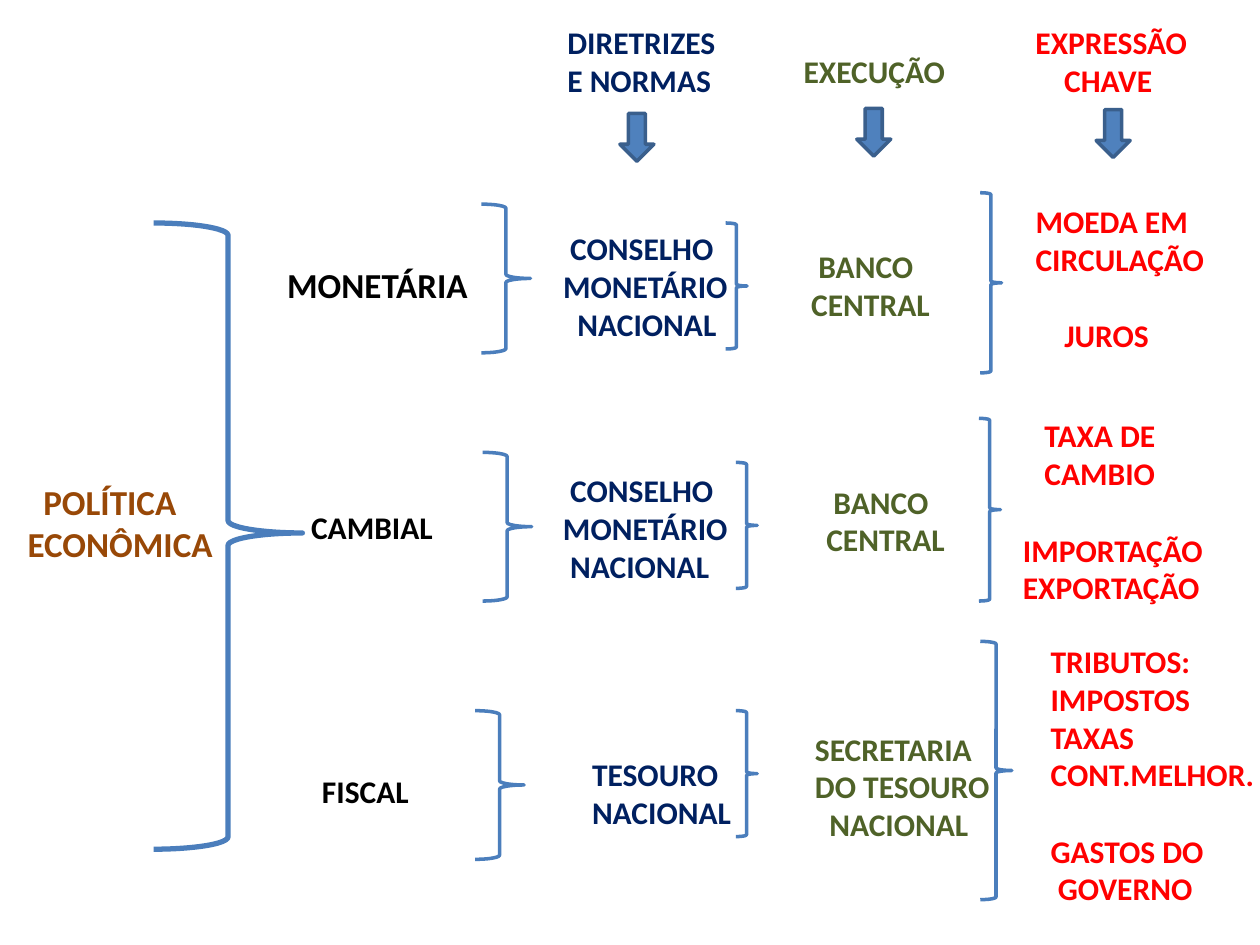
from pptx import Presentation, util as u
from pptx.dml.color import RGBColor
from pptx.enum import shapes, text

COLORS = {"root": "984807", "policy": "000000", "norms": "002060",
          "execution": "4F6228", "key": "FF0000",
          "brace": "4B7EBC", "arrow": "4F81BD", "arrow_edge": "3A5F8C"}
COLS, ROWS = 100, 75      # grid cells across and down the slide
STEP = 0.057              # indent step in inches
LINE_GAP = 22             # one empty line, in points


class Diagram:
    def __init__(self):
        self.deck = Presentation()
        self.deck.slide_width, self.deck.slide_height = u.Inches(10), u.Inches(7.5)
        self.slide = self.deck.slides.add_slide(self.deck.slide_layouts[6])

    def box(self, cells):
        """Turn left, top, width, height in grid cells into lengths."""
        across, down = self.deck.slide_width / COLS, self.deck.slide_height / ROWS
        return [round(n * unit) for n, unit in zip(cells, (across, down) * 2)]

    def label(self, cells, role, lines, size=18):
        """Write lines of (text, indent steps, empty lines before)."""
        frame = self.slide.shapes.add_textbox(*self.box(cells)).text_frame
        layout = {"word_wrap": True, "margin_right": 0,
                  "vertical_anchor": text.MSO_ANCHOR.BOTTOM}
        for name, value in layout.items():
            setattr(frame, name, value)
        for i, (words, indent, gap) in enumerate(lines):
            para = frame.paragraphs[0] if i == 0 else frame.add_paragraph()
            para.space_before = u.Pt(gap * LINE_GAP)
            para._p.get_or_add_pPr().set("marL", str(u.Inches(indent * STEP)))
            run = para.add_run()
            run.text = words
            style = {"name": "Calibri", "size": u.Pt(size), "bold": True}
            for name, value in style.items():
                setattr(run.font, name, value)
            run.font.color.rgb = RGBColor.from_string(COLORS[role])

    def preset(self, kind, cells, edge, weight):
        shape = self.slide.shapes.add_shape(kind, *self.box(cells))
        shape.shadow.inherit = False
        shape.line.color.rgb = RGBColor.from_string(COLORS[edge])
        shape.line.width = u.Pt(weight)
        return shape

    def brace(self, cells, weight=2, point=0.5):
        brace = self.preset(shapes.MSO_SHAPE.RIGHT_BRACE, cells, "brace", weight)
        brace.fill.background()
        brace.adjustments[1] = point

    def arrow(self, left, top):
        arrow = self.preset(shapes.MSO_SHAPE.DOWN_ARROW, (left, top, 2.7, 3.8),
                            "arrow_edge", 2)
        arrow.fill.solid()
        arrow.fill.fore_color.rgb = RGBColor.from_string(COLORS["arrow"])


# Column headings: role, box, lines, arrow corner
HEADINGS = [
    ("norms", (42.9, 1.2, 19.3, 7.1),
     [("DIRETRIZES", 2, 0), ("E NORMAS", 2, 0)], (49.2, 9)),
    ("execution", (62.8, 3.6, 20, 4), [("EXECUÇÃO", 0, 0)], (68, 8.6)),
    ("key", (81.2, 1.2, 16.7, 7.1),
     [("EXPRESSÃO", 0, 0), ("CHAVE", 4, 0)], (87, 8.7)),
]

# Each policy: labels as (role, box, lines, size), then its three braces
POLICIES = [
    ([("policy", (21.8, 10.2, 17.9, 14.5), [("MONETÁRIA", 0, 0)], 20),
      ("norms", (43.7, 14.6, 19.1, 13.1),
       [("CONSELHO", 1, 0), ("MONETÁRIO", 0, 0), ("NACIONAL", 2, 0)], 18),
      ("execution", (63.4, 19, 16, 7.1), [("BANCO", 1, 0), ("CENTRAL", 0, 0)], 18),
      ("key", (81.2, 15.5, 15.5, 13.1),
       [("MOEDA EM", 0, 0), ("CIRCULAÇÃO", 0, 0), ("JUROS", 4, 1)], 18)],
     [(38.2, 16.2, 3.9, 11.8), (57.6, 17.7, 1.7, 10), (77.8, 15.3, 1.7, 14.3)]),
    ([("policy", (23.7, 33.7, 14.5, 10.1), [("CAMBIAL", 0, 0)], 18),
      ("norms", (43.7, 27.7, 17.6, 19.2),
       [("CONSELHO", 1, 0), ("MONETÁRIO", 0, 0), ("NACIONAL", 1, 0)], 18),
      ("execution", (64.6, 37.7, 13.6, 7.1), [("BANCO", 1, 0), ("CENTRAL", 0, 0)], 18),
      ("key", (80.2, 32.4, 18.7, 16.2),
       [("TAXA DE", 3, 0), ("CAMBIO", 3, 0),
        ("IMPORTAÇÃO", 0, 1), ("EXPORTAÇÃO", 0, 0)], 18)],
     [(38.3, 35.9, 3.9, 11.8), (58.4, 36.7, 1.7, 10), (77.7, 33.2, 1.7, 14.5)]),
    ([("policy", (24, 51.7, 12.1, 13.1), [("FISCAL", 1, 0)], 18),
      ("norms", (46, 50.2, 13.1, 16.2), [("TESOURO", 0, 0), ("NACIONAL", 0, 0)], 18),
      ("execution", (63.7, 54.3, 19.7, 13.1),
       [("SECRETARIA", 0, 0), ("DO TESOURO", 0, 0), ("NACIONAL", 2, 0)], 18),
      ("key", (82.4, 50.3, 18.3, 22.2),
       [("TRIBUTOS:", 0, 0), ("IMPOSTOS", 0, 0), ("TAXAS", 0, 0),
        ("CONT.MELHOR.", 0, 0), ("GASTOS DO", 0, 1), ("GOVERNO", 1, 0)], 18)],
     [(37.7, 56.4, 3.9, 11.8), (58.4, 56.4, 1.7, 10), (77.8, 50.9, 2.5, 20.5)]),
]


def main():
    diagram = Diagram()

    # Root of the tree
    diagram.label((1.2, 34.2, 18.1, 11.1), "root",
                  [("POLÍTICA", 2.2, 0), ("ECONÔMICA", 0, 0)], 20)
    diagram.brace((12.2, 17.7, 11.8, 49.7), weight=3, point=0.495)

    # Headings with their arrows
    for role, cells, lines, corner in HEADINGS:
        diagram.label(cells, role, lines)
        diagram.arrow(*corner)

    # Policy branches
    for labels, braces in POLICIES:
        for role, cells, lines, size in labels:
            diagram.label(cells, role, lines, size)
        for cells in braces:
            diagram.brace(cells)

    diagram.deck.save("out.pptx")


if __name__ == "__main__":
    main()
